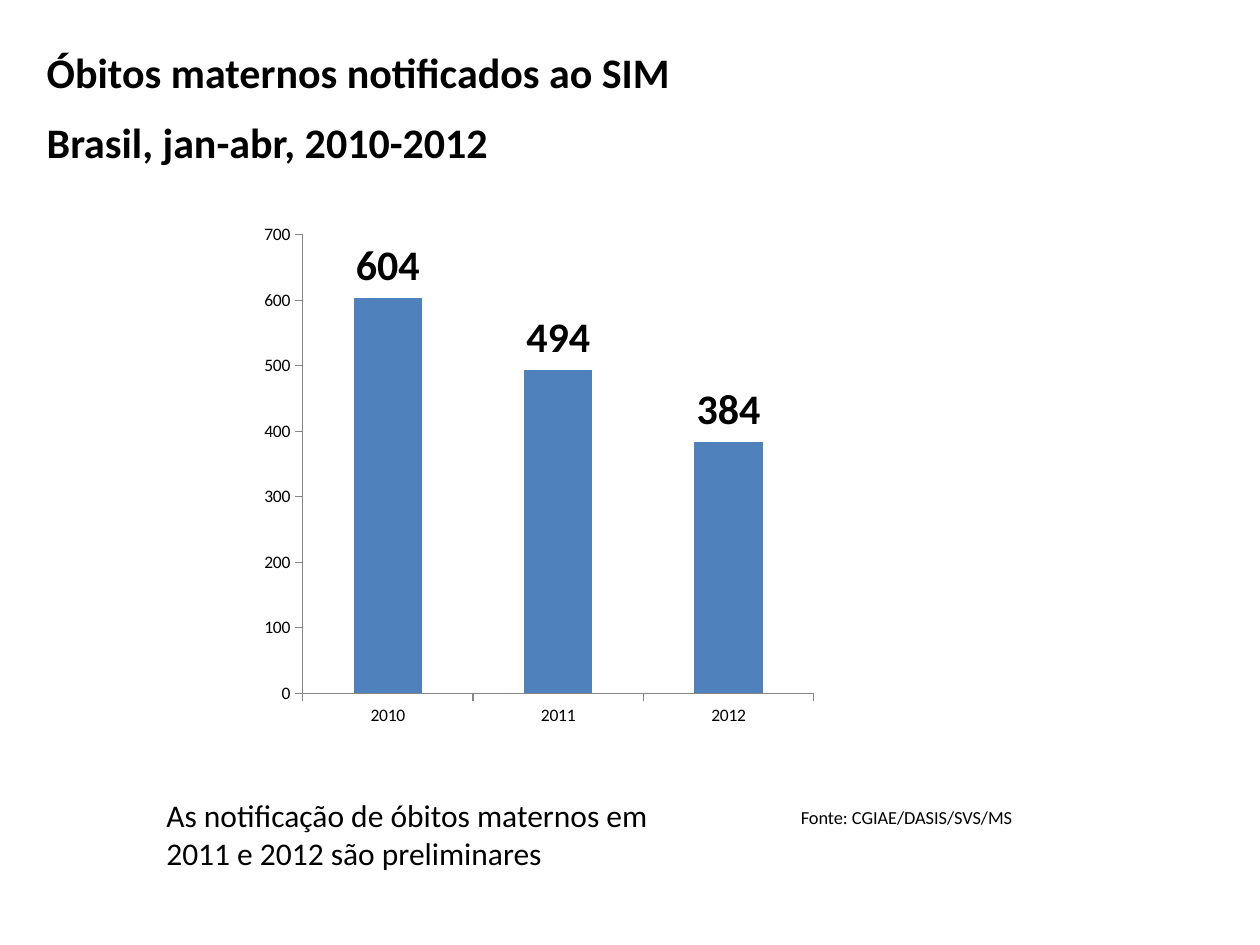
"""Build the slide on maternal deaths reported to SIM in Brazil, January to April 2010-2012."""
from dataclasses import dataclass

from pptx import Presentation
from pptx.chart.data import CategoryChartData
from pptx.dml.color import RGBColor
from pptx.enum.chart import XL_CHART_TYPE, XL_LABEL_POSITION, XL_TICK_MARK
from pptx.enum.text import MSO_ANCHOR, MSO_AUTO_SIZE, PP_ALIGN
from pptx.util import Pt


@dataclass(frozen=True)
class Theme:
    font: str = "Calibri"
    ink: RGBColor = RGBColor(0x00, 0x00, 0x00)
    bar: RGBColor = RGBColor(0x4F, 0x81, 0xBD)
    axis: RGBColor = RGBColor(0x86, 0x86, 0x86)
    heading: Pt = Pt(24)
    note: Pt = Pt(18)
    source: Pt = Pt(10.5)
    tick: Pt = Pt(10)


theme = Theme()


def style(font, size, bold=False):
    font.name = theme.font
    font.size = size
    font.bold = bold
    font.color.rgb = theme.ink


def write(paragraph, text, size, bold=False):
    paragraph.alignment = PP_ALIGN.LEFT
    run = paragraph.add_run()
    run.text = text
    style(run.font, size, bold)


prs = Presentation()
prs.slide_width, prs.slide_height = Pt(720), Pt(540)
slide = prs.slides.add_slide(prs.slide_layouts[5])

title = slide.shapes.title
title.left, title.top, title.width, title.height = Pt(19.5), Pt(31.5), Pt(629), Pt(45.5)
heading = title.text_frame
heading.word_wrap = True
heading.auto_size = MSO_AUTO_SIZE.NONE
heading.vertical_anchor = MSO_ANCHOR.TOP
subject = heading.paragraphs[0]
period = heading.add_paragraph()
period.space_before = Pt(20)
for line, text in (
    (subject, "Óbitos maternos notificados ao SIM"),
    (period, "Brasil, jan-abr, 2010-2012"),
):
    line.line_spacing = Pt(20)
    write(line, text, theme.heading, bold=True)

deaths = CategoryChartData()
deaths.categories = ["2010", "2011", "2012"]
deaths.add_series("Óbitos maternos", (604, 494, 384))
chart = slide.shapes.add_chart(
    XL_CHART_TYPE.COLUMN_CLUSTERED, Pt(144.5), Pt(122.5), Pt(327), Pt(298), deaths
).chart
chart.has_title = False
chart.has_legend = False
style(chart.font, theme.tick)

for axis in (chart.category_axis, chart.value_axis):
    axis.has_major_gridlines = False
    axis.major_tick_mark = XL_TICK_MARK.OUTSIDE
    axis.minor_tick_mark = XL_TICK_MARK.NONE
    axis.format.line.color.rgb = theme.axis
    axis.format.line.width = Pt(0.75)
chart.value_axis.minimum_scale = 0
chart.value_axis.maximum_scale = 700
chart.value_axis.major_unit = 100

columns = chart.plots[0]
columns.gap_width = 150
columns.vary_by_categories = False
bars = columns.series[0]
bars.format.fill.solid()
bars.format.fill.fore_color.rgb = theme.bar
labels = bars.data_labels
labels.show_value = True
labels.position = XL_LABEL_POSITION.OUTSIDE_END
style(labels.font, theme.heading, bold=True)

for text, size, left, top, width, height in (
    ("As notificação de óbitos maternos em 2011 e 2012 são preliminares",
     theme.note, 88, 451.5, 329, 51),
    ("Fonte: CGIAE/DASIS/SVS/MS", theme.source, 450.5, 457, 209.5, 20),
):
    caption = slide.shapes.add_textbox(Pt(left), Pt(top), Pt(width), Pt(height)).text_frame
    caption.word_wrap = True
    caption.auto_size = MSO_AUTO_SIZE.SHAPE_TO_FIT_TEXT
    write(caption.paragraphs[0], text, size)

prs.save("out.pptx")
